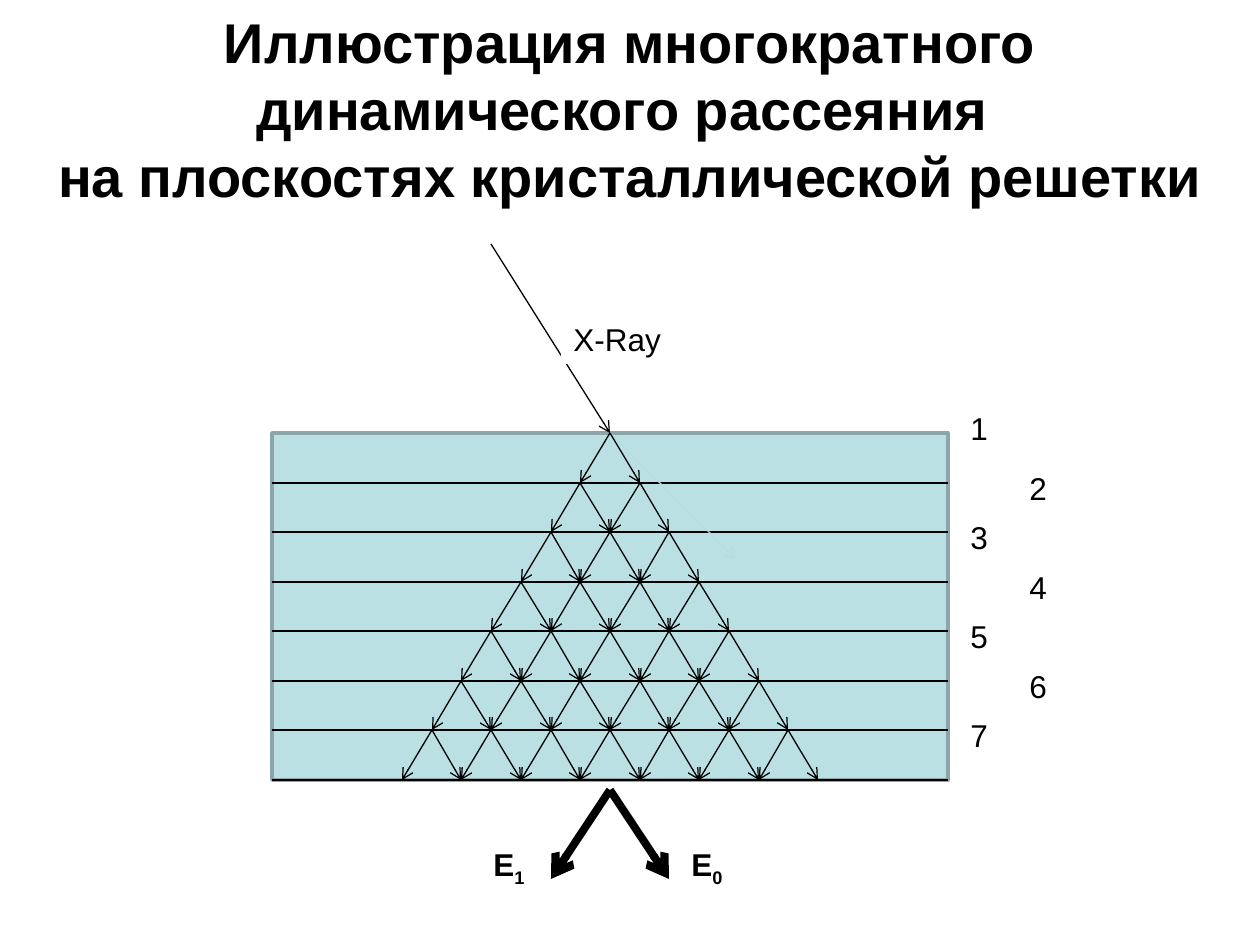
from dataclasses import dataclass

from lxml import etree
from pptx import Presentation
from pptx.dml.color import RGBColor
from pptx.enum.shapes import MSO_CONNECTOR, MSO_SHAPE
from pptx.enum.text import MSO_ANCHOR, MSO_AUTO_SIZE, PP_ALIGN
from pptx.oxml.ns import qn
from pptx.shapes.autoshape import Shape
from pptx.shapes.connector import Connector
from pptx.slide import Slide
from pptx.text.text import _Run
from pptx.util import Emu, Pt

STRAIGHT = MSO_CONNECTOR.STRAIGHT
RECTANGLE = MSO_SHAPE.RECTANGLE
TOP = MSO_ANCHOR.TOP
FIT_SHAPE = MSO_AUTO_SIZE.SHAPE_TO_FIT_TEXT
NO_AUTOFIT = MSO_AUTO_SIZE.NONE
CENTER = PP_ALIGN.CENTER
LEFT = PP_ALIGN.LEFT

EMU_PER_PX = 914400 / 126
FONT = "Arial"
COLORS = {
    "ink": "000000",
    "paper": "FFFFFF",
    "crystal": "BBE0E3",
    "crystal_edge": "8AA6A8",
    "faint_ray": "B6DCDF",
}

PLANES = 7
CRYSTAL_LEFT, CRYSTAL_TOP, CRYSTAL_WIDTH, CRYSTAL_HEIGHT = 272, 433, 676, 347
APEX_X = CRYSTAL_LEFT + CRYSTAL_WIDTH // 2
FAN_HALF_WIDTH = 208
TOP_SIDE = 0
LABEL_HEIGHT = 50
TITLE_LINES = (
    "Иллюстрация многократного динамического рассеяния ",
    "на плоскостях кристаллической решетки",
)


@dataclass(frozen=True)
class Point:
    x: int
    y: int


@dataclass(frozen=True)
class Label:
    left: int
    top: int
    width: int
    text: str
    subscript: str = ""


def px(length: int) -> Emu:
    return Emu(round(length * EMU_PER_PX))


def color(name: str) -> RGBColor:
    return RGBColor.from_string(COLORS[name])


def plane_y(plane: int) -> int:
    return CRYSTAL_TOP + round(CRYSTAL_HEIGHT * plane / PLANES)


def lattice_node(plane: int, index: int) -> Point:
    """Scattering point number index, from the left, on a plane."""
    offset = round(FAN_HALF_WIDTH * (2 * index - plane) / PLANES)
    return Point(APEX_X + offset, plane_y(plane))


def add_line(slide: Slide, start: Point, end: Point, line_color: str = "ink",
             weight: float = 0.75, arrow: bool = True) -> Connector:
    connector = slide.shapes.add_connector(
        STRAIGHT, px(start.x), px(start.y), px(end.x), px(end.y))
    connector.line.color.rgb = color(line_color)
    connector.line.width = Pt(weight)
    if arrow:
        etree.SubElement(connector.line._get_or_add_ln(), qn("a:tailEnd"), type="arrow")
    etree.SubElement(connector._element.spPr, qn("a:effectLst"))
    return connector


def style_run(run: _Run, size: int, bold: bool) -> None:
    run.font.name = FONT
    run.font.size = Pt(size)
    run.font.bold = bold
    run.font.color.rgb = color("ink")


def add_label(slide: Slide, label: Label) -> None:
    box = slide.shapes.add_textbox(
        px(label.left), px(label.top), px(label.width), px(LABEL_HEIGHT))
    box.fill.solid()
    box.fill.fore_color.rgb = color("paper")
    frame = box.text_frame
    frame.word_wrap = False
    frame.auto_size = FIT_SHAPE
    paragraph = frame.paragraphs[0]
    paragraph.alignment = LEFT
    bold = bool(label.subscript)
    base = paragraph.add_run()
    base.text = label.text
    style_run(base, 18, bold)
    if label.subscript:
        index = paragraph.add_run()
        index.text = label.subscript
        style_run(index, 18, bold)
        index._r.get_or_add_rPr().set("baseline", "-25000")


def fill_title(slide: Slide) -> None:
    title = slide.shapes.title
    title.left, title.top, title.width, title.height = px(0), px(1), px(1260), px(217)
    title.fill.solid()
    title.fill.fore_color.rgb = color("paper")
    frame = title.text_frame
    frame.word_wrap = True
    frame.auto_size = NO_AUTOFIT
    frame.vertical_anchor = TOP
    for number, line in enumerate(TITLE_LINES):
        paragraph = frame.add_paragraph() if number else frame.paragraphs[0]
        paragraph.alignment = CENTER
        run = paragraph.add_run()
        run.text = line
        style_run(run, 32, True)


def add_crystal(slide: Slide) -> Shape:
    crystal = slide.shapes.add_shape(
        RECTANGLE, px(CRYSTAL_LEFT), px(CRYSTAL_TOP), px(CRYSTAL_WIDTH), px(CRYSTAL_HEIGHT))
    crystal.shadow.inherit = False
    crystal.fill.solid()
    crystal.fill.fore_color.rgb = color("crystal")
    crystal.line.color.rgb = color("crystal_edge")
    crystal.line.width = Pt(2)
    for plane in range(1, PLANES + 1):
        y = plane_y(plane)
        add_line(slide, Point(CRYSTAL_LEFT, y), Point(CRYSTAL_LEFT + CRYSTAL_WIDTH, y),
                 arrow=False)
    return crystal


def add_rays(slide: Slide, crystal: Shape) -> None:
    apex = lattice_node(0, 0)
    faint_ray = add_line(slide, apex, Point(736, 559), "faint_ray")
    faint_ray.begin_connect(crystal, TOP_SIDE)
    for plane in range(PLANES):
        for index in range(plane + 1):
            for branch in (0, 1):
                ray = add_line(slide, lattice_node(plane, index),
                               lattice_node(plane + 1, index + branch))
                if plane == 0:
                    ray.begin_connect(crystal, TOP_SIDE)
    incident_ray = add_line(slide, Point(491, 244), apex)
    incident_ray.end_connect(crystal, TOP_SIDE)


def add_labels(slide: Slide) -> None:
    for plane in range(PLANES):
        left = 1017 if plane % 2 else 958
        rise = 20 if plane else 30
        add_label(slide, Label(left, plane_y(plane) - rise, 43, str(plane + 1)))
    add_label(slide, Label(561, 314, 113, "X-Ray"))


def add_outgoing_waves(slide: Slide) -> None:
    for end_x in (669, 551):
        add_line(slide, Point(APEX_X, 790), Point(end_x, 879), weight=4.5)
    add_label(slide, Label(679, 839, 58, "E", "0"))
    add_label(slide, Label(481, 839, 58, "E", "1"))


def main() -> None:
    presentation = Presentation()
    presentation.slide_width, presentation.slide_height = px(1260), px(945)
    slide = presentation.slides.add_slide(presentation.slide_layouts[5])
    fill_title(slide)
    crystal = add_crystal(slide)
    add_rays(slide, crystal)
    add_labels(slide)
    add_outgoing_waves(slide)
    presentation.save("out.pptx")


if __name__ == "__main__":
    main()
